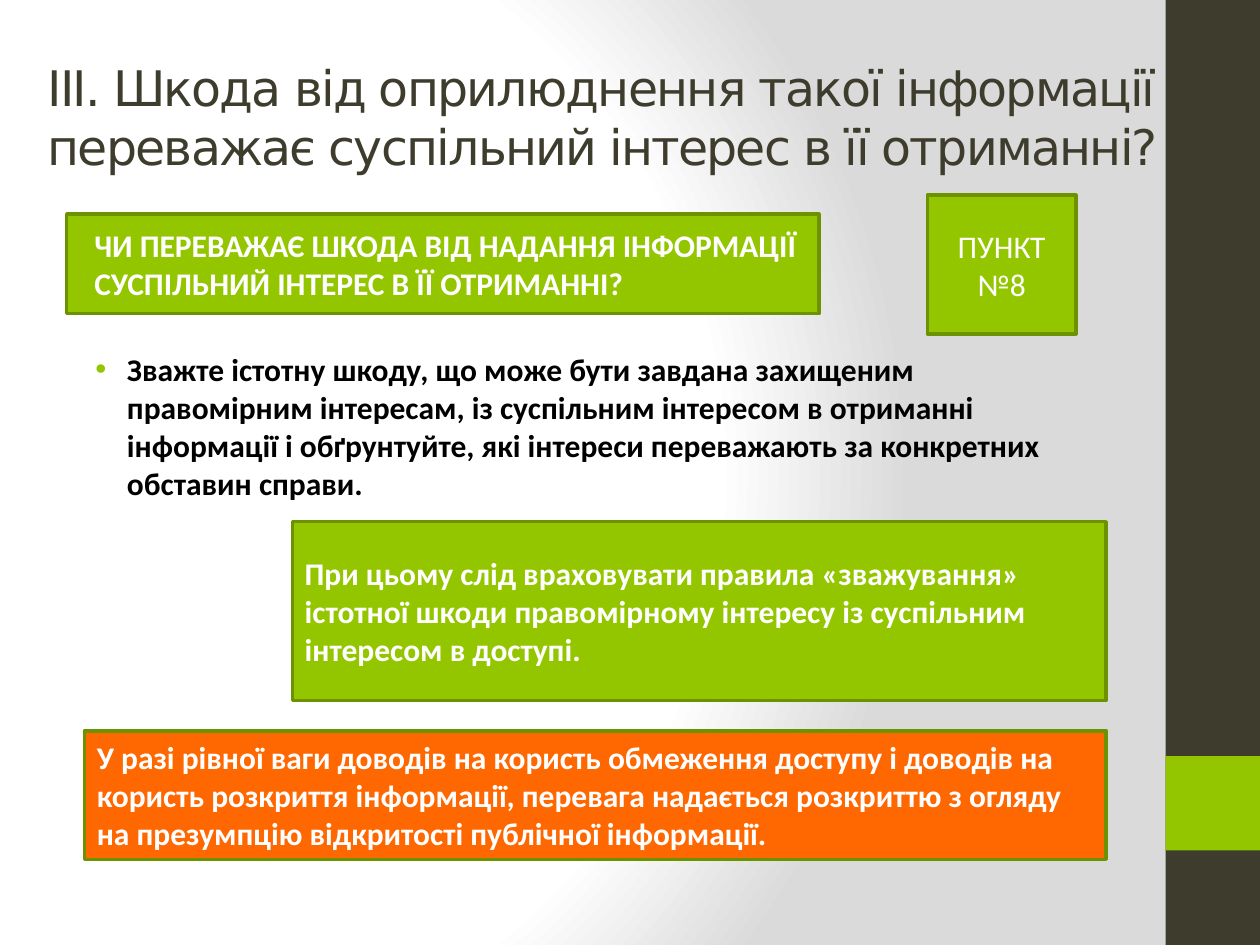
from lxml import etree
from pptx import Presentation
from pptx.dml.color import RGBColor
from pptx.enum import shapes, text
from pptx.oxml import parse_xml
from pptx.oxml.ns import nsdecls, qn
from pptx.util import Inches, Pt

DARK = RGBColor(0x3E, 0x3D, 0x2D)
GREEN = RGBColor(0x94, 0xC6, 0x00)
EDGE = RGBColor(0x6D, 0x92, 0x00)
ORANGE = RGBColor(0xFF, 0x67, 0x00)
WHITE = RGBColor(0xFF, 0xFF, 0xFF)
BLACK = RGBColor(0, 0, 0)

WIDTH, HEIGHT = 10, 7.5
BAND = 0.75
GRADIENT = [(0, "FFFFFF"), (75, "FFFFFF"), (100, "DADADA")]

TITLE = ("ІІІ. Шкода від оприлюднення такої інформації "
         "переважає суспільний інтерес в її отриманні?")
ADVICE = ("Зважте істотну шкоду, що може бути завдана захищеним правомірним "
          "інтересам, із суспільним інтересом в отриманні інформації і обґрунтуйте, "
          "які інтереси переважають за конкретних обставин справи.")
# text, (left, top, width, height), fill, text format
BOXES = [
    ("ЧИ ПЕРЕВАЖАЄ ШКОДА ВІД НАДАННЯ ІНФОРМАЦІЇ СУСПІЛЬНИЙ ІНТЕРЕС В ЇЇ ОТРИМАННІ?",
     (0.53, 1.7, 5.97, 0.79), GREEN, dict(margin=0.12)),
    ("ПУНКТ №8", (7.36, 1.55, 1.18, 1.1), GREEN,
     dict(bold=False, align=text.PP_ALIGN.CENTER)),
    ("При цьому слід враховувати правила «зважування» істотної шкоди правомірному "
     "інтересу із суспільним інтересом в доступі.",
     (2.32, 4.14, 6.46, 1.42), GREEN, {}),
    ("У разі рівної ваги доводів на користь обмеження доступу і доводів на користь "
     "розкриття інформації, перевага надається розкриттю з огляду на презумпцію "
     "відкритості публічної інформації.",
     (0.67, 5.8, 8.11, 1.02), ORANGE, {}),
]


def set_background(slide):
    stops = "".join(f'<a:gs pos="{pos * 1000}"><a:srgbClr val="{color}"/></a:gs>'
                    for pos, color in GRADIENT)
    slide.element.cSld.insert(0, parse_xml(
        f'<p:bg {nsdecls("p", "a")}><p:bgPr><a:gradFill rotWithShape="1">'
        f'<a:gsLst>{stops}</a:gsLst><a:path path="circle">'
        '<a:fillToRect l="20000" t="50000" r="100000" b="50000"/></a:path>'
        '</a:gradFill><a:effectLst/></p:bgPr></p:bg>'))


def add_rect(slide, at, fill, edge=None):
    sp = slide.shapes.add_shape(shapes.MSO_SHAPE.RECTANGLE, *map(Inches, at))
    sp.shadow.inherit = False
    sp.fill.solid()
    sp.fill.fore_color.rgb = fill
    if edge is None:
        sp.line.fill.background()
    else:
        sp.line.color.rgb = edge
        sp.line.width = Pt(2)
    return sp


def write(sp, words, size=18, font="Calibri", color=WHITE, bold=True, spacing=0,
          align=text.PP_ALIGN.LEFT, anchor=text.MSO_ANCHOR.MIDDLE,
          margin=0, indent=0, bullet=None):
    tf = sp.text_frame
    tf.word_wrap = True
    tf.vertical_anchor = anchor
    p = tf.paragraphs[0]
    p.alignment = align
    pPr = p._p.get_or_add_pPr()
    pPr.set("marL", str(Inches(margin)))
    pPr.set("indent", str(Inches(indent)))
    if bullet:
        bu_color = etree.SubElement(pPr, qn("a:buClr"))
        etree.SubElement(bu_color, qn("a:srgbClr")).set("val", str(GREEN))
        etree.SubElement(pPr, qn("a:buFont")).set("typeface", "Arial")
        etree.SubElement(pPr, qn("a:buChar")).set("char", bullet)
    r = p.add_run()
    r.text = words
    r.font.size, r.font.name, r.font.bold = Pt(size), font, bold
    r.font.color.rgb = color
    if spacing:
        r._r.get_or_add_rPr().set("spc", str(spacing * 100))


def main():
    prs = Presentation()
    prs.slide_width, prs.slide_height = Inches(WIDTH), Inches(HEIGHT)
    slide = prs.slides.add_slide(prs.slide_layouts[6])
    set_background(slide)

    add_rect(slide, (WIDTH - BAND, 0, BAND, HEIGHT), DARK)
    add_rect(slide, (WIDTH - BAND, HEIGHT * 0.8, BAND, BAND), GREEN)

    title = slide.shapes.add_textbox(*map(Inches, (0.28, 0.3, 9.06, 1.25)))
    write(title, TITLE, size=28, font="DejaVu Sans", color=DARK, bold=False, spacing=-1)
    advice = slide.shapes.add_textbox(*map(Inches, (0.53, 2.73, 8.33, 1.57)))
    write(advice, ADVICE, color=BLACK, anchor=text.MSO_ANCHOR.TOP,
          margin=0.38, indent=-0.25, bullet="•")

    for words, at, fill, style in BOXES:
        write(add_rect(slide, at, fill, EDGE), words, **style)
    prs.save("out.pptx")


if __name__ == "__main__":
    main()
